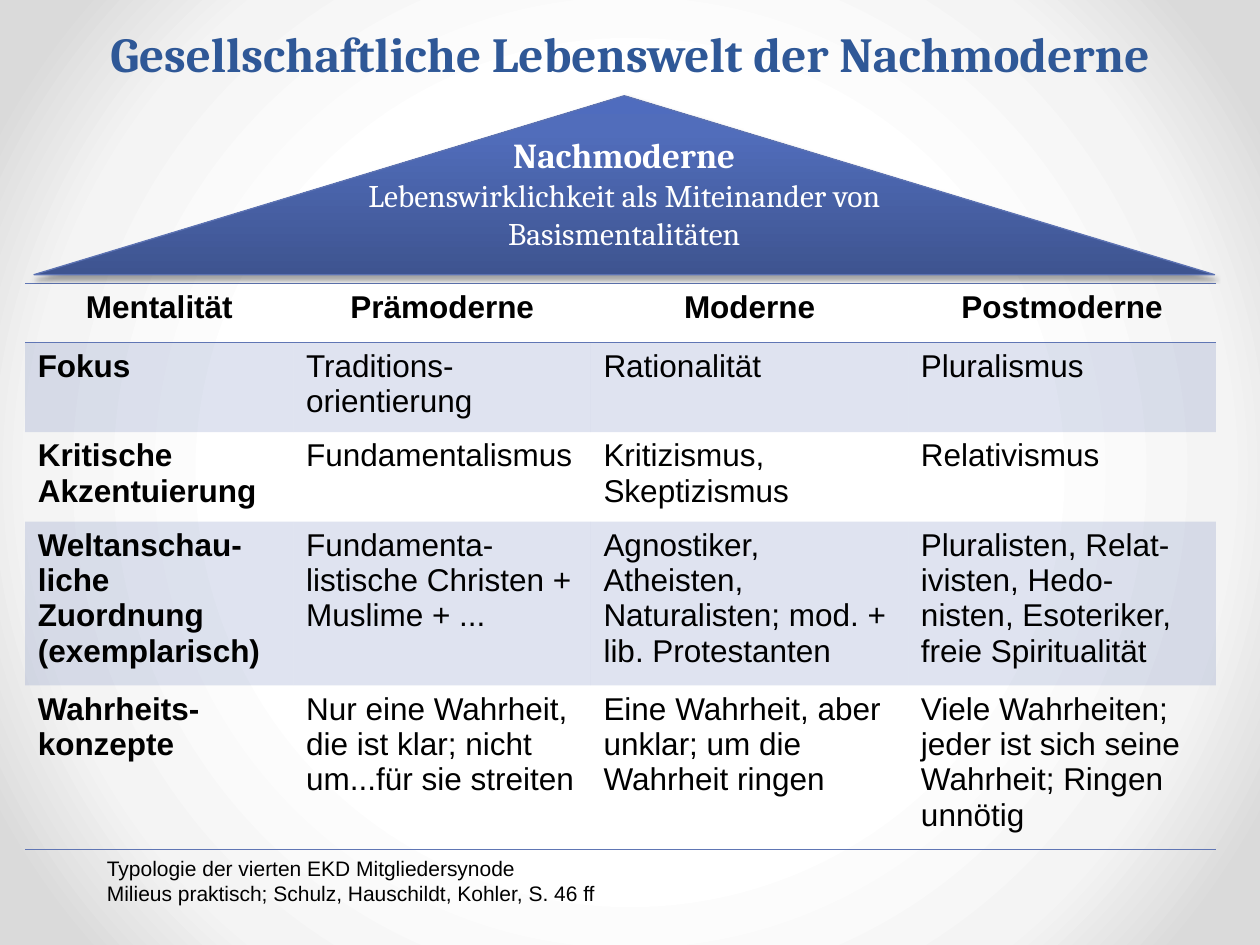
from dataclasses import dataclass

from lxml.etree import SubElement
from pptx import Presentation
from pptx.dml.color import RGBColor
from pptx.enum.shapes import MSO_SHAPE as Preset
from pptx.enum.text import MSO_ANCHOR as Anchor, MSO_AUTO_SIZE as AutoSize, PP_ALIGN as Align
from pptx.oxml.ns import qn
from pptx.util import Inches, Pt


@dataclass(frozen=True)
class Theme:
    serif: str = "Cambria"
    sans: str = "Arial"
    title: str = "2F5897"
    accent: str = "6076B4"
    roof_line: str = "5C72B2"
    black: str = "000000"
    white: str = "FFFFFF"
    roof: tuple = ((0, "3E5490"), (80, "516DBB"), (100, "4F6CBE"))
    backdrop: tuple = ((50, "FFFFFF"), (76, "F4F4F4"), (92, "DADADA"))
    title_size: int = 28
    roof_size: int = 20
    body_size: int = 18
    source_size: int = 12


@dataclass(frozen=True)
class TextStyle:
    font: str
    size: int
    color: str
    bold: bool = False
    align: Align = Align.LEFT


@dataclass(frozen=True)
class TableRow:
    height: float
    cells: tuple
    header: bool = False
    shaded: bool = False
    borders: tuple = ()


THEME = Theme()
COLUMN_WIDTHS = (2.13, 2.36, 2.52, 2.44)
ROWS = (
    TableRow(0.47, ("Mentalität", "Prämoderne", "Moderne", "Postmoderne"),
             header=True, borders=("a:lnT", "a:lnB")),
    TableRow(0.71, ("Fokus", "Traditions-orientierung", "Rationalität", "Pluralismus"), shaded=True),
    TableRow(0.71, ("Kritische Akzentuierung", "Fundamentalismus",
                    "Kritizismus, Skeptizismus", "Relativismus")),
    TableRow(1.3, ("Weltanschau-liche Zuordnung (exemplarisch)",
                   "Fundamenta-listische Christen + Muslime + ...",
                   "Agnostiker, Atheisten, Naturalisten; mod. + lib. Protestanten",
                   "Pluralisten, Relat-ivisten, Hedo-nisten, Esoteriker, freie Spiritualität"),
             shaded=True),
    TableRow(1.3, ("Wahrheits-konzepte",
                   "Nur eine Wahrheit, die ist klar; nicht um...für sie streiten",
                   "Eine Wahrheit, aber unklar; um die Wahrheit ringen",
                   "Viele Wahrheiten; jeder ist sich seine Wahrheit; Ringen unnötig"),
             borders=("a:lnB",)),
)


def add_color(parent, color: str, alpha: int = 100) -> None:
    """Append an RGB colour with an opacity in percent."""
    element = SubElement(parent, qn("a:srgbClr"), val=color)
    if alpha < 100:
        SubElement(element, qn("a:alpha"), val=str(alpha * 1000))


def fill_gradient(fill, owner, stops: tuple, radial: bool = False) -> None:
    """Fill with gradient stops, from the centre or from bottom to top."""
    fill.gradient()
    gradient = owner.find(".//" + qn("a:gradFill"))
    for child in list(gradient):
        gradient.remove(child)
    stop_list = SubElement(gradient, qn("a:gsLst"))
    for position, color in stops:
        add_color(SubElement(stop_list, qn("a:gs"), pos=str(position * 1000)), color)
    if radial:
        direction = SubElement(gradient, qn("a:path"), {"path": "circle"})
        SubElement(direction, qn("a:fillToRect"), dict.fromkeys("ltrb", "50000"))
    else:
        SubElement(gradient, qn("a:lin"), ang="16200000", scaled="0")


def format_paragraph(paragraph, style: TextStyle) -> None:
    """Apply a text style to a paragraph and its runs."""
    paragraph.alignment = style.align
    for run in paragraph.runs:
        run.font.name = style.font
        run.font.size = Pt(style.size)
        run.font.bold = style.bold
        run.font.color.rgb = RGBColor.from_string(style.color)


def add_title(slide) -> None:
    """Place and format the title placeholder."""
    title = slide.shapes.title
    title.left, title.top, title.width, title.height = map(Inches, (0, 0.13, 10, 0.57))
    frame = title.text_frame
    frame.text = "Gesellschaftliche Lebenswelt der Nachmoderne"
    frame.auto_size = AutoSize.NONE
    frame.vertical_anchor = Anchor.BOTTOM
    frame.paragraphs[0].line_spacing = Pt(58)
    format_paragraph(frame.paragraphs[0],
                     TextStyle(THEME.serif, THEME.title_size, THEME.title, True, Align.CENTER))


def add_source(slide) -> None:
    """Add the source note below the table."""
    box = slide.shapes.add_textbox(Inches(0.75), Inches(6.74), Inches(4.57), Inches(0.51))
    frame = box.text_frame
    frame.word_wrap = True
    frame.text = ("Typologie der vierten EKD Mitgliedersynode\n"
                  "Milieus praktisch; Schulz, Hauschildt, Kohler, S. 46 ff")
    for paragraph in frame.paragraphs:
        format_paragraph(paragraph, TextStyle(THEME.sans, THEME.source_size, THEME.black))


def format_cell(cell, text: str, row: TableRow, bold: bool) -> None:
    """Write one table cell with its borders and fill."""
    cell.text = text
    align = Align.CENTER if row.header else Align.LEFT
    format_paragraph(cell.text_frame.paragraphs[0],
                     TextStyle(THEME.sans, THEME.body_size, THEME.black, bold, align))
    properties = cell._tc.get_or_add_tcPr()
    for tag in row.borders:
        line = SubElement(properties, qn(tag), w=str(Pt(1)))
        add_color(SubElement(line, qn("a:solidFill")), THEME.accent)
    if row.shaded:
        add_color(SubElement(properties, qn("a:solidFill")), THEME.accent, 20)
    else:
        cell.fill.background()


def add_mentality_table(slide) -> None:
    """Add the table comparing the mentalities."""
    frame = slide.shapes.add_table(
        len(ROWS), len(COLUMN_WIDTHS), Inches(0.2), Inches(2.25),
        Inches(sum(COLUMN_WIDTHS)), Inches(sum(row.height for row in ROWS)))
    table = frame.table
    table.horz_banding = False
    style_id = table._tbl.tblPr.find(qn("a:tableStyleId"))
    style_id.text = "{2D5ABB26-0587-4C30-8999-92F81FD0307C}"
    for column, width in zip(table.columns, COLUMN_WIDTHS):
        column.width = Inches(width)
    for row_index, row in enumerate(ROWS):
        table.rows[row_index].height = Inches(row.height)
        for column_index, text in enumerate(row.cells):
            format_cell(table.cell(row_index, column_index), text, row,
                        row.header or column_index == 0)


def add_roof(slide) -> None:
    """Add the triangular roof above the table."""
    roof = slide.shapes.add_shape(Preset.ISOSCELES_TRIANGLE, Inches(0.27), Inches(0.76),
                                  Inches(9.37), Inches(1.42))
    fill_gradient(roof.fill, roof.element, THEME.roof)
    roof.line.color.rgb = RGBColor.from_string(THEME.roof_line)
    roof.line.width = Pt(0.75)
    roof.shadow.inherit = False
    effects = roof.element.spPr.find(qn("a:effectLst"))
    shadow = SubElement(effects, qn("a:outerShdw"), blurRad=str(Pt(3.1)), dist=str(Pt(1.8)),
                        dir="5400000", rotWithShape="0")
    add_color(shadow, THEME.black, 35)
    frame = roof.text_frame
    frame.word_wrap = True
    frame.vertical_anchor = Anchor.MIDDLE
    frame.margin_bottom = Inches(0.64)
    frame.text = "Nachmoderne\nLebenswirklichkeit als Miteinander von Basismentalitäten"
    styles = (TextStyle(THEME.serif, THEME.roof_size, THEME.white, True, Align.CENTER),
              TextStyle(THEME.serif, THEME.body_size, THEME.white, False, Align.CENTER))
    for paragraph, style in zip(frame.paragraphs, styles):
        format_paragraph(paragraph, style)


def main() -> None:
    """Build and save the presentation."""
    presentation = Presentation()
    presentation.slide_width, presentation.slide_height = Inches(10), Inches(7.5)
    slide = presentation.slides.add_slide(presentation.slide_layouts[5])
    fill_gradient(slide.background.fill, slide.element, THEME.backdrop, radial=True)
    add_title(slide)
    add_source(slide)
    add_mentality_table(slide)
    add_roof(slide)
    presentation.save("out.pptx")


if __name__ == "__main__":
    main()
